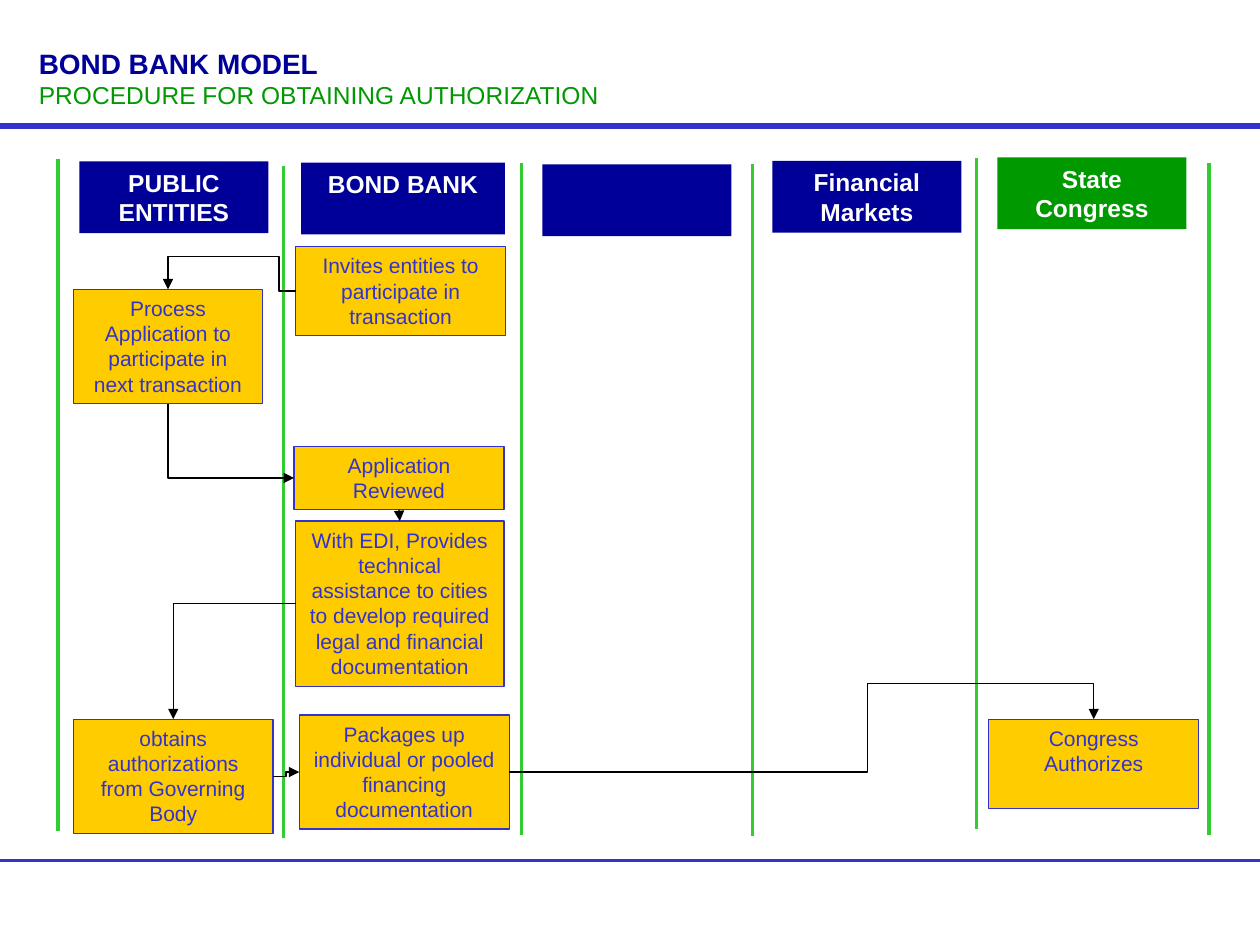
from dataclasses import dataclass
from typing import Optional

from lxml import etree
from pptx import Presentation
from pptx.dml.color import RGBColor
from pptx.enum import shapes, text
from pptx.oxml.ns import qn
from pptx.util import Pt

COLORS = {
    "navy": "000099", "green": "009900", "lane": "33CC33", "rule": "3333CC",
    "step": "FFCC00", "white": "FFFFFF", "black": "000000",
}
FONT = "Arial"
HEADER_HEIGHT = 41
LANE_HEIGHT = 384


@dataclass
class Box:
    label: str
    left: float
    top: float
    width: float
    height: float
    fill: str = "step"
    ink: str = "rule"
    size: float = 12
    bold: bool = False
    border: Optional[str] = "rule"


@dataclass
class Route:
    """An elbow arrow that leaves sideways; bends are the x and y of its turns."""
    start: tuple[float, float]
    end: tuple[float, float]
    bend_x: Optional[float] = None
    bend_y: Optional[float] = None


def rgb(name: str) -> RGBColor:
    return RGBColor.from_string(COLORS[name])


def style_font(paragraph, size: float, color: str, bold: bool) -> None:
    for run in paragraph.runs:
        run.font.name = FONT
        run.font.size = Pt(size)
        run.font.bold = bold
        run.font.color.rgb = rgb(color)


def header(label: str, left: float, top: float, width: float = 108,
           fill: str = "navy") -> Box:
    return Box(label, left, top, width, HEADER_HEIGHT, fill, "white", 14, True, None)


def draw_box(slide, box: Box):
    shape = slide.shapes.add_shape(
        shapes.MSO_SHAPE.RECTANGLE,
        Pt(box.left), Pt(box.top), Pt(box.width), Pt(box.height))
    shape.shadow.inherit = False
    shape.fill.solid()
    shape.fill.fore_color.rgb = rgb(box.fill)
    if box.border:
        shape.line.color.rgb = rgb(box.border)
        shape.line.width = Pt(0.75)
    else:
        shape.line.fill.background()
    if box.label:
        frame = shape.text_frame
        frame.word_wrap = True
        frame.vertical_anchor = text.MSO_ANCHOR.TOP
        frame.text = box.label
        frame.paragraphs[0].alignment = text.PP_ALIGN.CENTER
        style_font(frame.paragraphs[0], box.size, box.ink, box.bold)
    return shape


def draw_line(slide, start: tuple[float, float], end: tuple[float, float],
              color: str, width: float, arrow: bool = False,
              kind=shapes.MSO_CONNECTOR.STRAIGHT):
    line = slide.shapes.add_connector(kind, *map(Pt, start + end))
    line.line.color.rgb = rgb(color)
    line.line.width = Pt(width)
    properties = line._element.spPr
    if arrow:
        etree.SubElement(properties.find(qn("a:ln")), qn("a:tailEnd"), type="triangle")
    etree.SubElement(properties, qn("a:effectLst"))
    return line


def draw_route(slide, route: Route):
    arrow = draw_line(slide, route.start, route.end, "black", 0.75, True,
                      shapes.MSO_CONNECTOR.ELBOW)
    bends = [(bend - a) / (b - a) for bend, a, b in
             zip((route.bend_x, route.bend_y), route.start, route.end)
             if bend is not None]
    geometry = arrow._element.spPr.find(qn("a:prstGeom"))
    geometry.set("prst", f"bentConnector{2 + len(bends)}")
    if len(bends) == 2:
        geometry.set("prst", "bentConnector4")
    adjustments = geometry.find(qn("a:avLst"))
    if adjustments is None:
        adjustments = etree.SubElement(geometry, qn("a:avLst"))
    names = ["adj1", "adj2"] if len(bends) == 2 else ["adj1"]
    for name, share in zip(names, bends):
        etree.SubElement(adjustments, qn("a:gd"), name=name,
                         fmla=f"val {round(share * 100000)}")
    return arrow


def draw_drop_route(slide, start: tuple[float, float], end: tuple[float, float]) -> None:
    """An elbow that goes down first: a mirrored one turned a quarter to the left."""
    across, down = end[0] - start[0], end[1] - start[1]
    center_x, center_y = (start[0] + end[0]) / 2, (start[1] + end[1]) / 2
    left, top = center_x - down / 2, center_y - across / 2
    arrow = draw_route(slide, Route((left, top), (left + down, top + across)))
    frame = arrow._element.spPr.find(qn("a:xfrm"))
    frame.set("rot", "16200000")
    frame.set("flipH", "1")


def main() -> None:
    deck = Presentation()
    deck.slide_width, deck.slide_height = Pt(720), Pt(540)
    slide = deck.slides.add_slide(deck.slide_layouts[5])

    # Title and page rules
    title = slide.shapes.title
    title.left, title.top, title.width, title.height = map(Pt, (15, 24, 690, 41))
    heading = title.text_frame
    heading.text = "BOND BANK MODEL\nPROCEDURE FOR OBTAINING AUTHORIZATION"
    heading.word_wrap = False
    heading.auto_size = text.MSO_AUTO_SIZE.NONE
    heading.vertical_anchor = text.MSO_ANCHOR.MIDDLE
    for paragraph, look in zip(heading.paragraphs,
                               [(16, "navy", True), (14, "green", False)]):
        paragraph.alignment = text.PP_ALIGN.LEFT
        paragraph.space_before = Pt(0)
        style_font(paragraph, *look)
    for y, width in [(491.8, 1.5), (72, 3)]:
        draw_line(slide, (0, y), (720, y), "rule", width)

    # Column headers
    for column in [
        header("PUBLIC ENTITIES", 45.4, 92.2),
        header("BOND BANK", 172, 93, 116.6),
        header("", 310, 94),
        header("Financial Markets", 441.4, 92),
        header("State Congress", 570, 90, fill="green"),
    ]:
        draw_box(slide, column)

    # Lane dividers
    for x, top in [(33, 91), (162, 95), (298, 93), (430, 94), (558, 90), (691, 93)]:
        draw_line(slide, (x, top), (x, top + LANE_HEIGHT), "lane", 2.25)

    # Procedure steps
    draw_box(slide, Box("Process Application to participate in next transaction",
                        42, 165.4, 108, 65.2))
    assistance = draw_box(slide, Box(
        "With EDI, Provides technical assistance to cities to develop required "
        "legal and financial documentation", 169, 297.8, 119, 94.5))
    draw_box(slide, Box("obtains authorizations from Governing Body",
                        42, 411, 114, 65.2))
    draw_box(slide, Box("Packages up individual or pooled financing documentation",
                        171, 408.6, 120, 65.2))
    review = draw_box(slide, Box("Application Reviewed", 168, 255, 120, 36.2))
    draw_box(slide, Box("Invites entities to participate in transaction",
                        169, 141, 120, 50.7))
    draw_box(slide, Box("Congress Authorizes", 565, 411, 120, 51))

    # Flow arrows
    for route in [
        Route((169, 166.4), (96, 165.4), 159.5, 146.5),
        Route((169, 345), (99, 411)),
        Route((156, 443.6), (171, 441.2), 163.5),
        Route((291, 441.2), (625, 411), 495.8, 390.6),
    ]:
        draw_route(slide, route)
    draw_drop_route(slide, (96, 230.6), (168, 273.1))
    handover = draw_line(slide, (228, 291.2), (228.5, 297.8), "black", 0.75, True)
    handover.begin_connect(review, 2)
    handover.end_connect(assistance, 0)

    deck.save("out.pptx")


if __name__ == "__main__":
    main()
